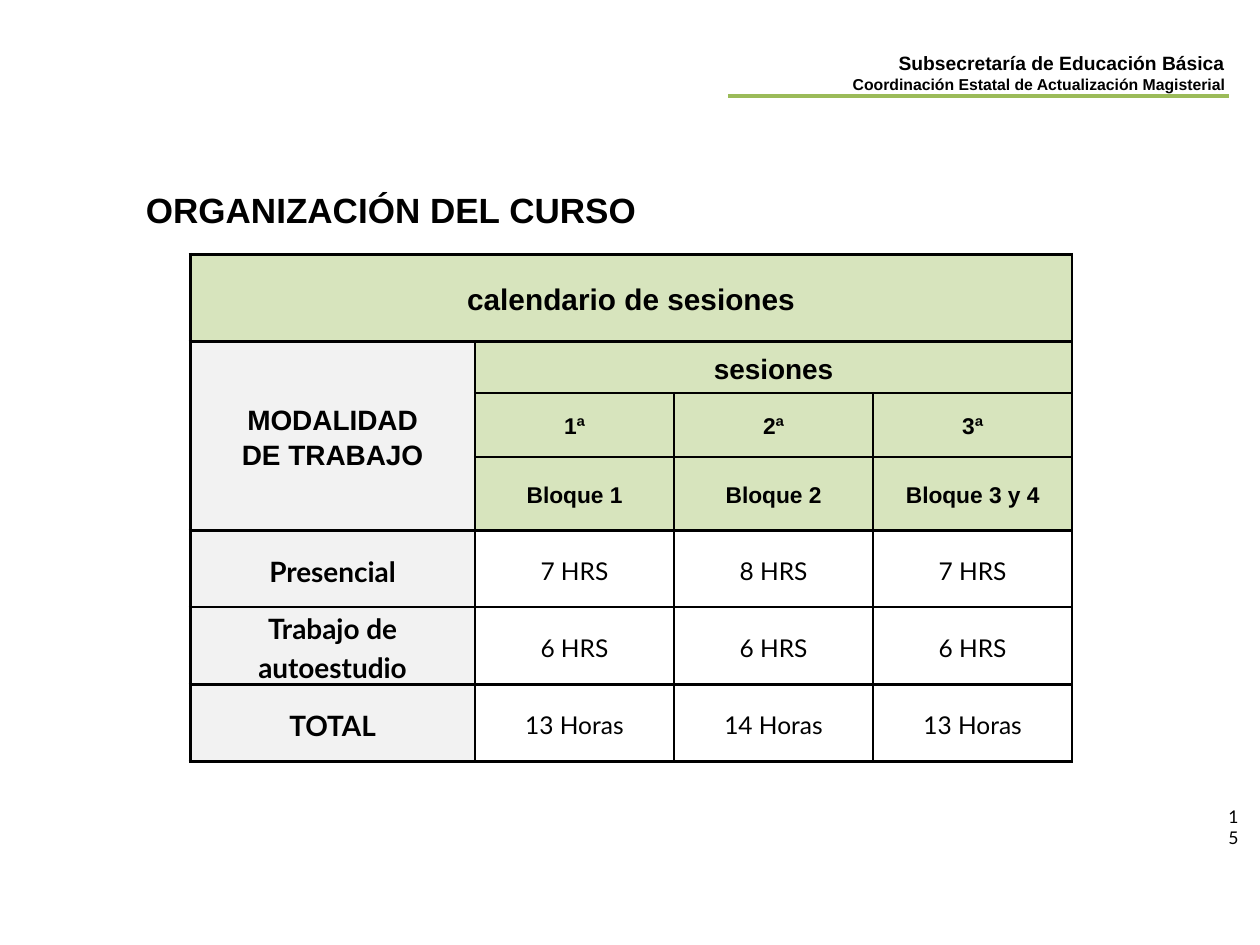
from pptx import Presentation
from pptx.dml.color import RGBColor
from pptx.enum.shapes import MSO_CONNECTOR as Connector
from pptx.enum.text import MSO_ANCHOR as Anchor, MSO_AUTO_SIZE as AutoSize, PP_ALIGN as Align
from pptx.oxml import parse_xml
from pptx.oxml.ns import nsdecls
from pptx.util import Inches, Pt

COLUMNS, ROWS = 100, 75
BLACK, GREEN, PALE_GREEN, GRAY = "000000", "9BBB59", "D7E4BD", "F2F2F2"
THIN, THICK = 1.5, 2.25


def color(value):
    """Turn a hex string into a colour."""
    return RGBColor.from_string(value)


def write(frame, text, sizes, font="Arial", bold=False, align=Align.LEFT, spacing=None):
    """Write one paragraph per line of text, with a size for each."""
    for index, (line, size) in enumerate(zip(text.split("\n"), sizes)):
        paragraph = frame.add_paragraph() if index else frame.paragraphs[0]
        paragraph.alignment = align
        paragraph.line_spacing = spacing
        run = paragraph.add_run()
        run.text = line
        run.font.name, run.font.size, run.font.bold = font, Pt(size), bold
        run.font.color.rgb = color(BLACK)


class Deck:
    """Hold the style and the current slide."""

    def __init__(self):
        """Start a presentation with one blank slide."""
        self.presentation = Presentation()
        self.presentation.slide_width = Inches(10)
        self.presentation.slide_height = Inches(7.5)
        self.slide = self.presentation.slides.add_slide(self.presentation.slide_layouts[6])

    def x(self, columns):
        """Convert grid columns to a length."""
        return round(self.presentation.slide_width * columns / COLUMNS)

    def y(self, rows):
        """Convert grid rows to a length."""
        return round(self.presentation.slide_height * rows / ROWS)

    def text(self, left, top, width, height, text, sizes, **style):
        """Add a wrapped text box."""
        shape = self.slide.shapes.add_textbox(self.x(left), self.y(top), self.x(width), self.y(height))
        shape.text_frame.word_wrap = True
        shape.text_frame.auto_size = AutoSize.SHAPE_TO_FIT_TEXT
        write(shape.text_frame, text, sizes, **style)

    def line(self, start, end, row, line_color, width):
        """Add a horizontal line without shadow."""
        connector = self.slide.shapes.add_connector(
            Connector.STRAIGHT, self.x(start), self.y(row), self.x(end), self.y(row))
        connector.line.color.rgb = color(line_color)
        connector.line.width = Pt(width)
        connector._element.spPr.append(parse_xml(f"<a:effectLst {nsdecls('a')}/>"))

    def table(self, left, top, widths, heights):
        """Add an unstyled table with the given column widths and row heights."""
        table = self.slide.shapes.add_table(
            len(heights), len(widths), self.x(left), self.y(top),
            self.x(sum(widths)), self.y(sum(heights))).table
        table.first_row = table.horz_banding = False
        for column, width in zip(table.columns, widths):
            column.width = self.x(width)
        for row, height in zip(table.rows, heights):
            row.height = self.y(height)
        return table

    def cell(self, cell, fill, borders):
        """Set the borders, fill and margins of a table cell."""
        properties = cell._tc.get_or_add_tcPr()
        for side, width in zip("LRTB", borders):
            properties.append(parse_xml(
                f'<a:ln{side} {nsdecls("a")} w="{Pt(width)}"><a:solidFill>'
                f'<a:srgbClr val="{BLACK}"/></a:solidFill></a:ln{side}>'))
        if fill:
            cell.fill.solid()
            cell.fill.fore_color.rgb = color(fill)
        else:
            cell.fill.background()
        cell.vertical_anchor = Anchor.MIDDLE
        cell.margin_left = cell.margin_right = Inches(0.07)
        cell.margin_top = cell.margin_bottom = 0


def add_schedule(deck):
    """Add the table of sessions and hours."""
    contents = [
        ["calendario de sesiones"],
        ["MODALIDAD\nDE TRABAJO", "sesiones"],
        ["", "1ª", "2ª", "3ª"],
        ["", "Bloque 1", "Bloque 2", "Bloque 3 y 4"],
        ["Presencial", "7 HRS", "8 HRS", "7 HRS"],
        ["Trabajo de autoestudio", "6 HRS", "6 HRS", "6 HRS"],
        ["TOTAL", "13 Horas", "14 Horas", "13 Horas"],
    ]
    label_sizes = [17, 16, 13, 13, 14, 14, 14]
    header_rows, last_row, last_column = 4, 6, 3
    table = deck.table(15.1, 20.2, [22.6, 15.8, 15.8, 15.8], [6.9, 4.1, 5.1, 5.8, 6.1, 6.1, 6.1])
    for row in range(last_row + 1):
        for column in range(last_column + 1):
            header = row < header_rows
            fill = GRAY if row and not column else PALE_GREEN if header else None
            thick = (column == 0, column == last_column and row < 2, row == 0, row == last_row)
            deck.cell(table.cell(row, column), fill, [THICK if edge else THIN for edge in thick])
    for first, last in [((0, 0), (0, 3)), ((1, 0), (3, 0)), ((1, 1), (1, 3))]:
        table.cell(*first).merge(table.cell(*last))
    for row, texts in enumerate(contents):
        header = row < header_rows
        for column, text in enumerate(texts):
            if text:
                size = 16 if row and not column else label_sizes[row]
                write(table.cell(row, column).text_frame, text, [size, size],
                      font="Arial" if header else "Lato", bold=header or not column,
                      align=Align.CENTER, spacing=1.15)


def main():
    """Build and save the slide."""
    deck = Deck()
    deck.text(40.3, 3.6, 57.9, 4.4,
              "Subsecretaría de Educación Básica\nCoordinación Estatal de Actualización Magisterial",
              [11, 9], bold=True, align=Align.RIGHT)
    deck.line(97.5, 57.8, 7.6, GREEN, THICK)
    add_schedule(deck)
    deck.text(10.6, 14.5, 48, 4.4, "ORGANIZACIÓN DEL CURSO", [20], bold=True)
    deck.text(96.5, 63.5, 3.5, 2.7, "15", [10], font="Lato")
    deck.presentation.save("out.pptx")


if __name__ == "__main__":
    main()
